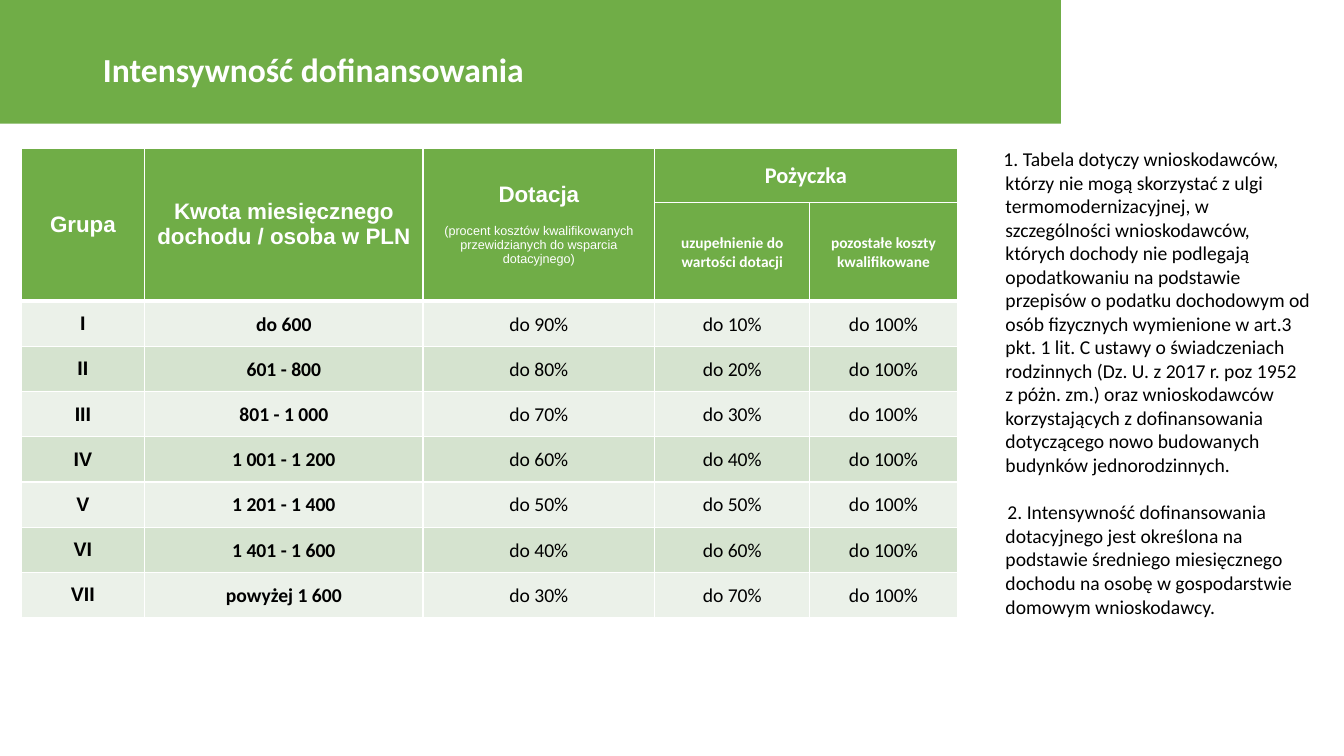
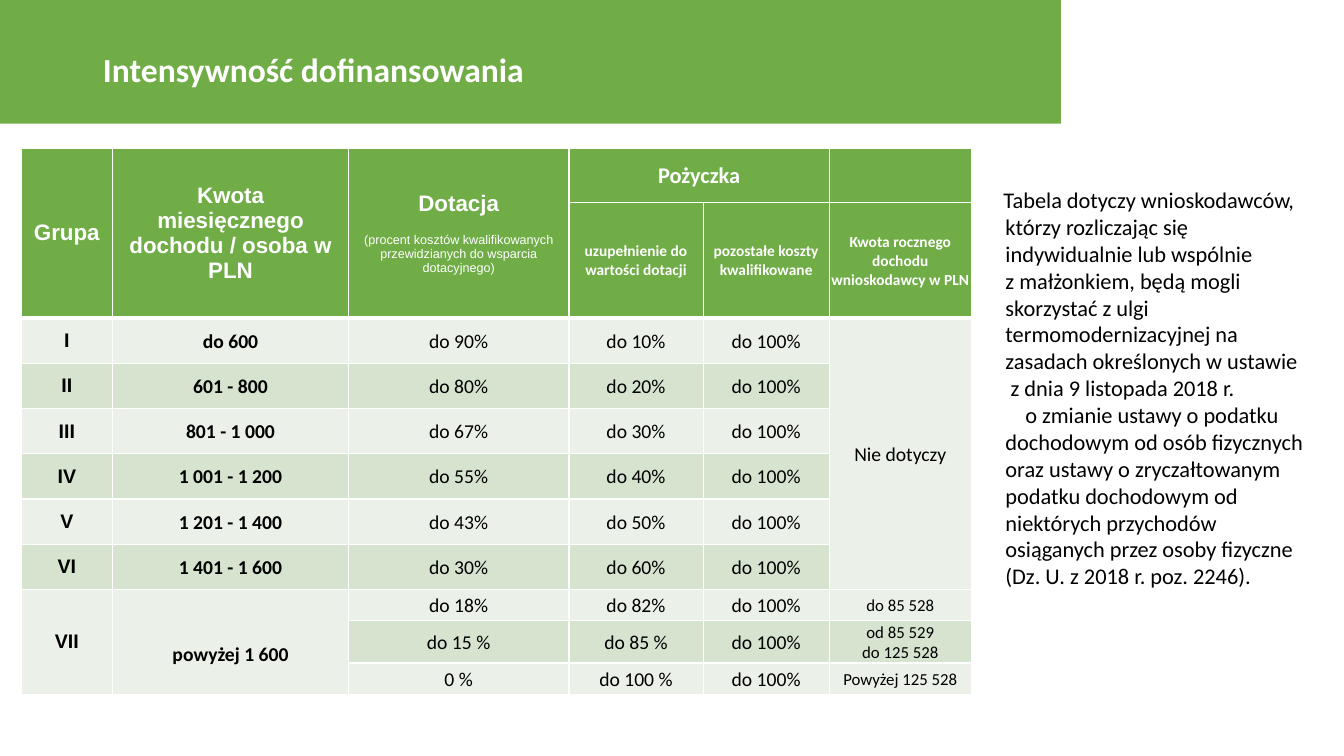
from pptx import Presentation
from pptx.dml.color import RGBColor
from pptx.enum.shapes import MSO_SHAPE
from pptx.enum.text import MSO_ANCHOR, PP_ALIGN
from pptx.oxml import parse_xml
from pptx.oxml.ns import nsdecls
from pptx.util import Cm, Pt

GREEN = RGBColor(0x70, 0xAD, 0x47)
LIGHT = RGBColor(0xEB, 0xF1, 0xE9)
SAGE = RGBColor(0xD5, 0xE3, 0xCF)
WHITE = RGBColor(0xFF, 0xFF, 0xFF)
BLACK = RGBColor(0x00, 0x00, 0x00)
THIN, THICK = Pt(1), Pt(3)
HEADER_ROWS = 2
TITLE = "Intensywność dofinansowania"

GROUP_HEADER = [
    "Grupa",
    "Kwota miesięcznego dochodu / osoba w PLN",
    "Dotacja\n(procent kosztów kwalifikowanych przewidzianych do wsparcia dotacyjnego)",
    "Pożyczka",
]
LOAN_HEADER = ["", "", "", "uzupełnienie do wartości dotacji", "pozostałe koszty kwalifikowane"]
INCOMES = [
    ("I", "do 600"), ("II", "601 - 800"), ("III", "801 - 1 000"), ("IV", "1 001 - 1 200"),
    ("V", "1 201 - 1 400"), ("VI", "1 401 - 1 600"), ("VII", "powyżej 1 600"),
]
HEADER_MERGES = [(0, 0, 1, 0), (0, 1, 1, 1), (0, 2, 1, 2), (0, 3, 0, 4)]


def style_paragraph(paragraph, font_name, size, color, bold=False):
    """Format every run of a paragraph."""
    for span in paragraph.runs:
        span.font.name = font_name
        span.font.size = Pt(size)
        span.font.color.rgb = color
        span.font.bold = bold


def prepare_layout(deck):
    """Put the green band and the title position on the title-only layout."""
    layout = deck.slide_layouts[5]
    for holder in list(layout.placeholders):
        if holder.placeholder_format.idx:
            holder.element.getparent().remove(holder.element)
    title = layout.placeholders[0]
    title.left, title.top, title.width, title.height = Cm(2.34), Cm(0.53), Cm(24.2), Cm(2.4)
    return layout


def move_band_to_layout(page, layout):
    """Draw the band and hand it over to the layout, behind its title."""
    band = page.shapes.add_shape(MSO_SHAPE.RECTANGLE, 0, 0, Cm(26.74), Cm(3.12))
    band.shadow.inherit = False
    band.fill.solid()
    band.fill.fore_color.rgb = GREEN
    band.line.fill.background()
    layout.shapes.element.insert(2, band.element)


def add_page(deck, layout):
    """Add a slide with the common title."""
    page = deck.slides.add_slide(layout)
    frame = page.shapes.title.text_frame
    frame.text = TITLE
    frame.vertical_anchor = MSO_ANCHOR.MIDDLE
    frame.paragraphs[0].alignment = PP_ALIGN.LEFT
    style_paragraph(frame.paragraphs[0], "Calibri", 24, WHITE, True)
    return page


def set_borders(cell, row):
    """Give a cell white borders, heavier between header and body."""
    properties = cell._tc.get_or_add_tcPr()
    widths = {
        "lnL": THIN,
        "lnR": THIN,
        "lnT": THICK if row == HEADER_ROWS else THIN,
        "lnB": THICK if row == HEADER_ROWS - 1 else THIN,
    }
    for index, (tag, width) in enumerate(widths.items()):
        properties.insert(index, parse_xml(
            f'<a:{tag} {nsdecls("a")} w="{int(width)}"><a:solidFill>'
            f'<a:srgbClr val="{WHITE}"/></a:solidFill></a:{tag}>'))


def fill_cell(cell, row, column, text):
    """Write and format one table cell according to its place."""
    header = row < HEADER_ROWS
    cell.fill.solid()
    cell.fill.fore_color.rgb = GREEN if header else (LIGHT, SAGE)[row % 2]
    cell.vertical_anchor = MSO_ANCHOR.MIDDLE
    if column > 2 or (column and not header):
        cell.margin_left = cell.margin_right = cell.margin_top = Cm(0.03)
        cell.margin_bottom = 0
    set_borders(cell, row)
    if not text:
        return
    cell.text_frame.text = text
    if header:
        font_name = "Arial" if column < 3 else "Calibri"
        size, color, bold = (16, 11)[row], WHITE, True
    else:
        font_name = "Calibri" if column else "Arial"
        size = 12 if column == 5 and row > HEADER_ROWS else 14
        color, bold = BLACK, column < 2
    for paragraph in cell.text_frame.paragraphs:
        paragraph.alignment = PP_ALIGN.CENTER
        style_paragraph(paragraph, font_name, size, color, bold)
    if header and "\n" in text:
        detail = cell.text_frame.paragraphs[1]
        detail.space_before = Pt(12)
        style_paragraph(detail, font_name, 9, color)


def add_grid(page, rows, widths, heights, merges):
    """Add the table with its rows, sizes in centimetres and merged areas."""
    frame = page.shapes.add_table(len(rows), len(widths), Cm(0.53), Cm(3.73),
                                  Cm(sum(widths)), Cm(sum(heights)))
    table = frame.table
    table.horz_banding = False
    for column, width in zip(table.columns, widths):
        column.width = Cm(width)
    for line, height in zip(table.rows, heights):
        line.height = Cm(height)
    for row, texts in enumerate(rows):
        for column, text in enumerate(texts):
            fill_cell(table.cell(row, column), row, column, text)
    for top, left, bottom, right in merges:
        table.cell(top, left).merge(table.cell(bottom, right))
    return table


def add_note(page, top, height, size, notes):
    """Add the side note from (text, first-line indent, space before) entries."""
    box = page.shapes.add_textbox(Cm(24.13), Cm(top), Cm(9.19), Cm(height))
    frame = box.text_frame
    frame.word_wrap = True
    frame.text = "\n".join(text for text, _, _ in notes)
    for paragraph, (_, indent, gap) in zip(frame.paragraphs, notes):
        properties = paragraph._p.get_or_add_pPr()
        properties.set("marL", str(Cm(0.96)))
        properties.set("indent", str(Cm(indent)))
        if gap:
            paragraph.space_before = Pt(gap)
        style_paragraph(paragraph, "Calibri", size, BLACK)


def build_general_page(page):
    """Fill the page for applicants without the tax relief."""
    body = [[*income, f"do {90 - 10 * step}%", f"do {10 + 10 * step}%", "do 100%"]
            for step, income in enumerate(INCOMES)]
    add_grid(page, [GROUP_HEADER + [""], LOAN_HEADER] + body,
             [3.12, 7.01, 5.84, 3.91, 3.71], [1.37, 2.49] + [1.14] * 7, HEADER_MERGES)
    add_note(page, 3.58, 12.83, 14, [
        ("1. Tabela dotyczy wnioskodawców, którzy nie mogą skorzystać z ulgi "
         "termomodernizacyjnej, w szczególności wnioskodawców, których dochody nie podlegają "
         "opodatkowaniu na podstawie przepisów o podatku dochodowym od osób fizycznych "
         "wymienione w art.3 pkt. 1 lit. C ustawy o świadczeniach rodzinnych "
         "(Dz. U. z 2017 r. poz 1952\vz póżn. zm.) oraz wnioskodawców korzystających "
         "z dofinansowania dotyczącego nowo budowanych budynków jednorodzinnych.", -0.05, 0),
        ("2. Intensywność dofinansowania dotacyjnego jest określona na podstawie średniego "
         "miesięcznego dochodu na osobę w gospodarstwie domowym wnioskodawcy.", 0.05, 17),
    ])


def build_relief_page(page):
    """Fill the page for applicants who can use the tax relief."""
    grants = [90, 80, 67, 55, 43, 30]
    body = [[*income, f"do {grant}%", f"do {10 + 10 * step}%", "do 100%", ""]
            for step, (income, grant) in enumerate(zip(INCOMES, grants))]
    body[0][5] = "Nie dotyczy"
    body += [
        [*INCOMES[6], "do 18%", "do 82%", "do 100%", "do 85 528"],
        ["", "", "do 15 %", "do 85 %", "do 100%", "od 85 529\ndo 125 528"],
        ["", "", "0 %", "do 100 %", "do 100%", "Powyżej 125 528"],
    ]
    header = [GROUP_HEADER + ["", ""],
              LOAN_HEADER + ["Kwota rocznego dochodu wnioskodawcy w PLN"]]
    table = add_grid(page, header + body, [2.31, 5.94, 5.56, 3.38, 3.18, 3.58],
                     [1.37, 2.92] + [1.14] * 6 + [0.79, 1.04, 0.79],
                     HEADER_MERGES + [(2, 5, 7, 5), (8, 0, 10, 0), (8, 1, 10, 1)])
    table.cell(8, 1).margin_top = Cm(0.66)
    add_note(page, 4.57, 10.52, 16, [
        ("Tabela dotyczy wnioskodawców, którzy rozliczając się indywidualnie lub wspólnie\v"
         "z małżonkiem, będą mogli skorzystać z ulgi termomodernizacyjnej na zasadach "
         "określonych w ustawie", -0.05, 0),
        ("z dnia 9 listopada 2018 r.", 0.13, 0),
        ("o zmianie ustawy o podatku dochodowym od osób fizycznych oraz ustawy "
         "o zryczałtowanym podatku dochodowym od niektórych przychodów osiąganych przez osoby "
         "fizyczne (Dz. U. z 2018 r. poz. 2246).", 0.5, 0),
    ])


def main():
    """Build and save the deck."""
    deck = Presentation()
    deck.slide_width, deck.slide_height = Cm(33.87), Cm(19.05)
    layout = prepare_layout(deck)
    general, relief = add_page(deck, layout), add_page(deck, layout)
    move_band_to_layout(general, layout)
    build_general_page(general)
    build_relief_page(relief)
    deck.save("out.pptx")


if __name__ == "__main__":
    main()
